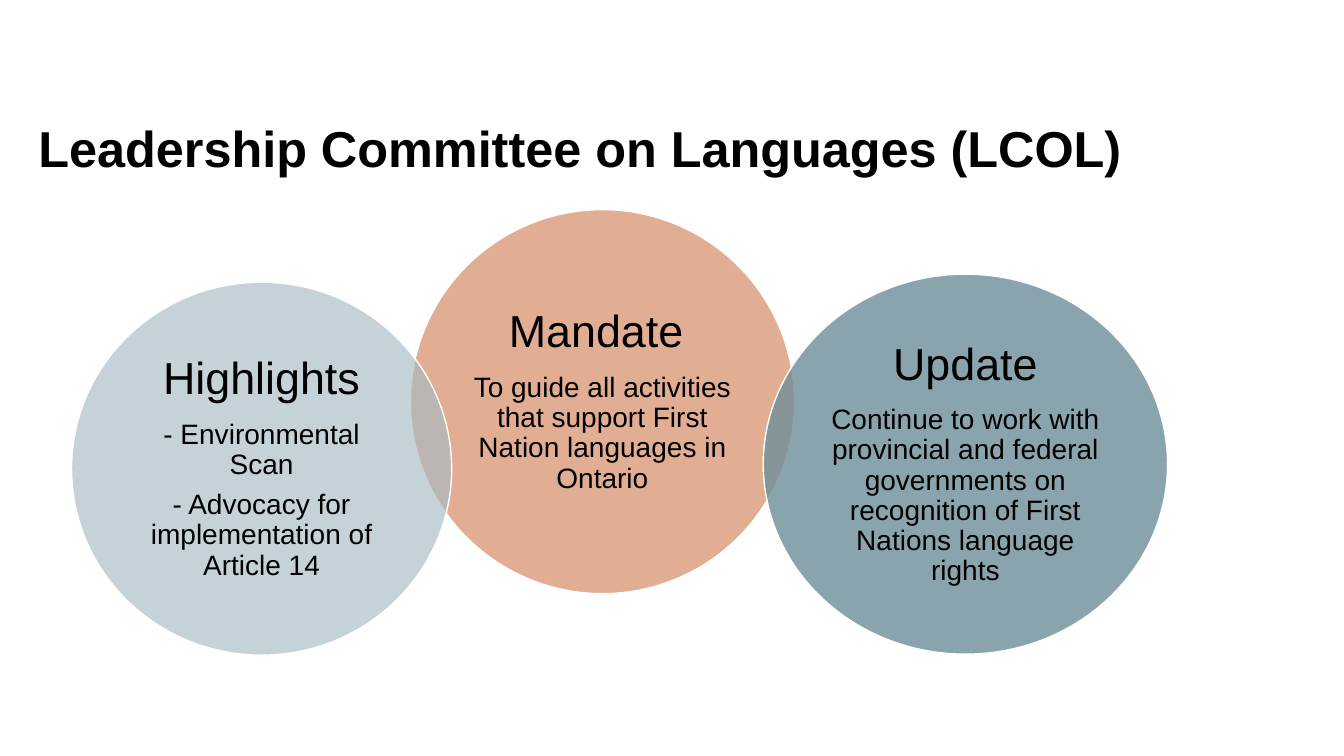
from lxml import etree
from pptx import Presentation
from pptx.dml.color import RGBColor
from pptx.enum import shapes, text
from pptx.oxml.ns import qn
from pptx.util import Inches, Pt

COLORS = {
    "text": "000000",
    "outline": "FFFFFF",
    "mandate": "C75F28",
    "highlights": "A7BBC2",
    "update": "6D8E99",
}
FONT = "Arial"


def rgb(name):
    return RGBColor.from_string(COLORS[name])


def format_paragraph(p, size, align, bold=False):
    p.alignment = align
    p.line_spacing = 0.9
    p.font.name = FONT
    p.font.size = Pt(size)
    p.font.bold = bold
    p.font.color.rgb = rgb("text")


prs = Presentation()
prs.slide_width = Inches(13.33)
prs.slide_height = Inches(7.5)
s = prs.slides.add_slide(prs.slide_layouts[5])

title = s.shapes.title
title.left, title.top = Inches(0.28), Inches(1.18)
title.width, title.height = Inches(12.68), Inches(3.25)
tf = title.text_frame
tf.text = "Leadership Committee on Languages (LCOL)"
tf.word_wrap = True
tf.auto_size = text.MSO_AUTO_SIZE.NONE
tf.vertical_anchor = text.MSO_ANCHOR.TOP
format_paragraph(tf.paragraphs[0], 36, text.PP_ALIGN.LEFT, bold=True)

# Colour, opacity in percent, (left, top, width, height), heading, body lines
circles = [
    ("mandate", 50, (4.07, 2.08, 3.81, 3.81), "Mandate ",
     ["To guide all activities that support First Nation languages in Ontario"]),
    ("highlights", 65, (0.71, 2.8, 3.77, 3.7), "Highlights",
     ["- Environmental Scan", "- Advocacy for implementation of Article 14"]),
    ("update", 80, (7.57, 2.72, 4.01, 3.77), "Update",
     ["Continue to work with provincial and federal governments on "
      "recognition of First Nations language rights"]),
]

for color, opacity, box, heading, lines in circles:
    sp = s.shapes.add_shape(shapes.MSO_SHAPE.OVAL, *map(Inches, box))
    sp.shadow.inherit = False
    sp.fill.solid()
    sp.fill.fore_color.rgb = rgb(color)
    srgb = sp.fill._xPr.find(qn("a:solidFill")).find(qn("a:srgbClr"))
    etree.SubElement(srgb, qn("a:alpha")).set("val", str(opacity * 1000))
    sp.line.color.rgb = rgb("outline")
    sp.line.width = Pt(1)

    tf = sp.text_frame
    tf.word_wrap = True
    tf.vertical_anchor = text.MSO_ANCHOR.MIDDLE
    tf.margin_left = tf.margin_right = Inches(0.04)
    tf.margin_top = tf.margin_bottom = Inches(0.04)
    tf.text = "\n".join([heading, *lines])
    for i, p in enumerate(tf.paragraphs):
        size = 20 if i else 32
        format_paragraph(p, size, text.PP_ALIGN.CENTER)
        p.space_after = Pt(size * 0.35)

prs.save("out.pptx")
